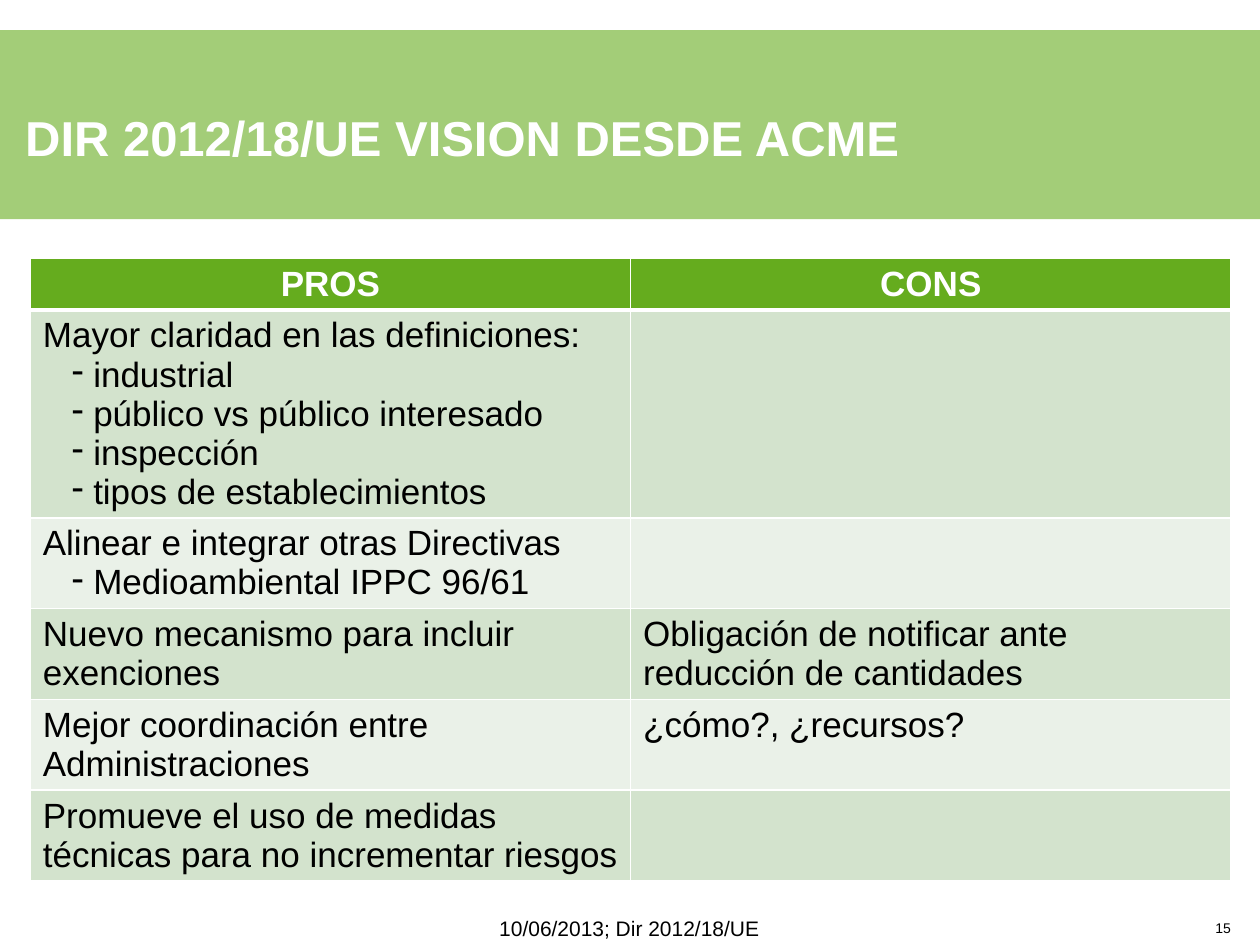
from lxml.etree import SubElement
from pptx import Presentation
from pptx.dml.color import RGBColor
from pptx.enum.shapes import MSO_SHAPE as Shape
from pptx.enum.text import MSO_ANCHOR as Anchor, PP_ALIGN as Align
from pptx.oxml.ns import qn
from pptx.util import Inches, Pt

COLORS = {"band": "A3CD78", "header": "65AC1E", "odd": "D3E3CD",
          "even": "EAF1E8", "white": "FFFFFF", "black": "000000"}

# Each row: pros, cons, height; each line after the first in a cell is a dash item
ROWS = [
    (["PROS"], ["CONS"], 0.4),
    (["Mayor claridad en las definiciones:", "industrial",
      "público vs público interesado", "inspección",
      "tipos de establecimientos"], [], 1.65),
    (["Alinear e integrar otras Directivas", "Medioambiental IPPC 96/61"],
     [], 0.72),
    (["Nuevo mecanismo para incluir exenciones"],
     ["Obligación de notificar ante reducción de cantidades"], 0.72),
    (["Mejor coordinación entre Administraciones"],
     ["¿cómo?, ¿recursos?"], 0.72),
    (["Promueve el uso de medidas técnicas para no incrementar riesgos"],
     [], 0.72),
]


def color(name):
    return RGBColor.from_string(COLORS[name])


def fill(item, name):
    item.fill.solid()
    item.fill.fore_color.rgb = color(name)


def style(para, size, name="black", bold=False, align=Align.LEFT):
    para.alignment = align
    font = para.font
    font.name, font.size, font.bold = "Arial", Pt(size), bold
    font.color.rgb = color(name)


def set_frame(frame, wrap=True):
    frame.margin_left = frame.margin_right = 0
    frame.margin_top = frame.margin_bottom = 0
    frame.vertical_anchor = Anchor.BOTTOM
    frame.word_wrap = wrap


def add_band(page):
    band = page.shapes.add_shape(Shape.RECTANGLE, 0, Inches(0.24),
                                 Inches(10), Inches(1.5))
    band.shadow.inherit = False
    fill(band, "band")
    band.line.fill.background()
    # Behind the title
    page.shapes._spTree.insert(2, band._element)


def set_title(page, text):
    title = page.shapes.title
    title.left, title.top = Inches(0.2), Inches(0.76)
    title.width, title.height = Inches(7.8), Inches(0.56)
    fill(title, "band")
    set_frame(title.text_frame)
    title.text_frame.text = text
    para = title.text_frame.paragraphs[0]
    para.line_spacing = 1.1
    style(para, 28, "white", True)


def add_dash(para):
    props = para._p.get_or_add_pPr()
    props.set("marL", str(Inches(0.4)))
    props.set("indent", str(-Inches(0.17)))
    SubElement(props, qn("a:buChar"), char="-")


def set_borders(cell, bottom):
    props = cell._tc.get_or_add_tcPr()
    widths = {"a:lnL": 1, "a:lnR": 1, "a:lnT": 1, "a:lnB": bottom}
    for index, (tag, width) in enumerate(widths.items()):
        line = SubElement(props, qn(tag), w=str(Pt(width)))
        paint = SubElement(line, qn("a:solidFill"))
        SubElement(paint, qn("a:srgbClr"), val=COLORS["white"])
        props.insert(index, line)


def fill_cell(cell, lines, row):
    header = row == 0
    fill(cell, "header" if header else "odd" if row % 2 else "even")
    set_borders(cell, 3 if header else 1)
    cell.text = "\n".join(lines)
    for index, para in enumerate(cell.text_frame.paragraphs):
        if index:
            add_dash(para)
        if header:
            style(para, 20, "white", True, Align.CENTER)
        else:
            style(para, 20)


def add_comparison(page):
    height = sum(row[-1] for row in ROWS)
    table = page.shapes.add_table(len(ROWS), 2, Inches(0.24), Inches(2.05),
                                  Inches(9.53), Inches(height)).table
    for row, (pros, cons, row_height) in enumerate(ROWS):
        table.rows[row].height = Inches(row_height)
        for column, lines in enumerate((pros, cons)):
            fill_cell(table.cell(row, column), lines, row)


def add_footer(page, text, place, size, align, wrap=True):
    box = page.shapes.add_textbox(*map(Inches, place))
    set_frame(box.text_frame, wrap)
    box.text_frame.text = text
    style(box.text_frame.paragraphs[0], size, align=align)


def main():
    deck = Presentation()
    deck.slide_width, deck.slide_height = Inches(10), Inches(7.5)
    page = deck.slides.add_slide(deck.slide_layouts[5])

    # Heading
    add_band(page)
    set_title(page, "DIR 2012/18/UE VISION DESDE ACME")

    # Pros and cons
    add_comparison(page)

    # Footer
    add_footer(page, "10/06/2013; Dir 2012/18/UE",
               (1.02, 7.36, 7.95, 0.11), 12, Align.CENTER)
    add_footer(page, "15", (8.98, 7.27, 0.79, 0.16), 8, Align.RIGHT, False)

    deck.save("out.pptx")


if __name__ == "__main__":
    main()
